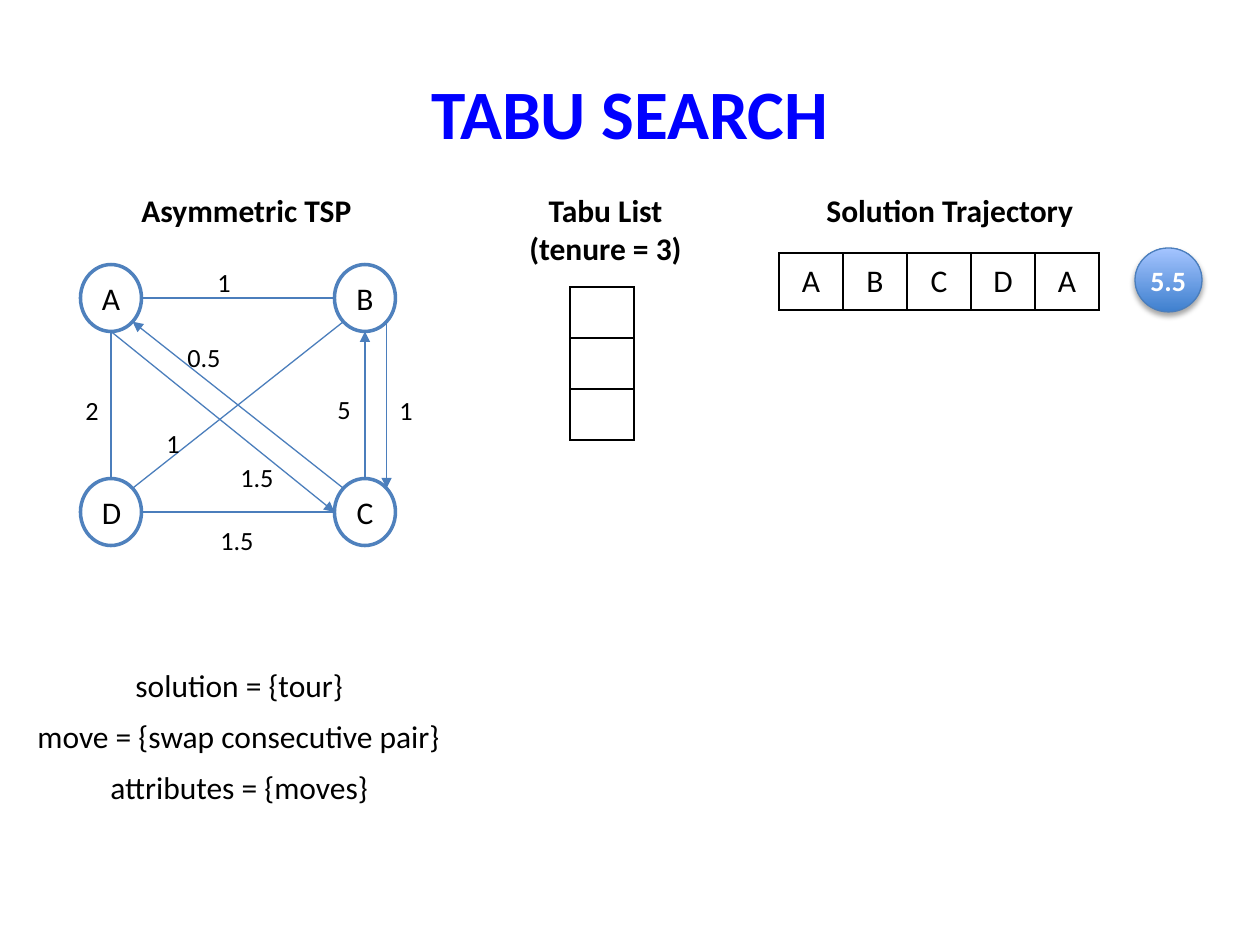
from math import cos, radians, sin
from typing import NamedTuple

from lxml.etree import SubElement
from pptx import Presentation
from pptx.dml.color import RGBColor
from pptx.enum.shapes import MSO_CONNECTOR, MSO_SHAPE
from pptx.enum.text import MSO_ANCHOR, MSO_AUTO_SIZE, PP_ALIGN
from pptx.oxml.ns import qn
from pptx.util import Emu, Pt

EMU_PER_PX = 914400 / 126
COLORS = {
    "title": "0000FF", "text": "000000", "white": "FFFFFF",
    "node": "4F81BD", "edge": "4B7EBC",
    "cost_dark": "3F80CE", "cost_light": "A4C4FF",
}
NODE_W, NODE_H = 61, 67
NODES = {"A": (111, 298), "B": (365, 298), "D": (111, 512), "C": (365, 512)}
# Clockwise angles from the right-hand side of a node
SIDES = {"right": 0, "bottom right": 45, "bottom": 90, "bottom left": 135,
         "left": 180, "top left": 225, "top": 270, "top right": 315}


class Label(NamedTuple):
    text: str
    left: int
    top: int
    width: int
    height: int
    size: float = 18
    bold: bool = False
    wrap: bool = True
    color: str = "text"
    align: PP_ALIGN = PP_ALIGN.LEFT


class Edge(NamedTuple):
    start: str
    start_side: str
    end: str
    end_side: str
    arrow: bool = False


class Grid(NamedTuple):
    rows: list
    left: int
    top: int
    col_width: int
    row_height: int


LABELS = [
    Label("Asymmetric TSP", 129, 185, 254, 50, bold=True),
    Label("Solution Trajectory", 814, 185, 286, 50, bold=True),
    Label("Tabu List\n(tenure = 3)", 514, 185, 183, 89, bold=True,
          align=PP_ALIGN.CENTER),
    Label("solution = {tour}", 123, 660, 236, 50, wrap=False),
    Label("move = {swap consecutive pair}", 25, 711, 432, 50, wrap=False),
    Label("attributes = {moves}", 98, 762, 286, 50, wrap=False),
]
EDGES = [
    Edge("A", "bottom", "C", "left", True),
    Edge("C", "top left", "A", "bottom right", True),
    Edge("A", "bottom", "D", "top"),
    Edge("D", "right", "C", "left"),
    Edge("B", "bottom left", "D", "top right"),
    Edge("A", "right", "B", "left"),
    Edge("B", "bottom right", "C", "top right", True),
    Edge("C", "top", "B", "bottom", True),
]
WEIGHTS = [
    ("1", 205, 260, 37), ("1", 154, 421, 37), ("1", 387, 388, 37),
    ("2", 73, 388, 37), ("1.5", 208, 518, 60), ("5", 325, 387, 37),
    ("0.5", 175, 335, 60), ("1.5", 228, 455, 77),
]
TRAJECTORY = Grid([list("ABCDA")], 779, 253, 64, 57)
TABU_LIST = Grid([[""]] * 3, 570, 287, 64, 51)


def px(n: float) -> Emu:
    return Emu(round(n * EMU_PER_PX))


def rgb(name: str) -> RGBColor:
    return RGBColor.from_string(COLORS[name])


def write(tf, text: str, size: float = 18, bold: bool = False,
          color: str = "text", align: PP_ALIGN = PP_ALIGN.CENTER) -> None:
    tf.text = text
    for p in tf.paragraphs:
        p.alignment = align
        for r in p.runs:
            for name, value in {"name": "Calibri", "size": Pt(size), "bold": bold}.items():
                setattr(r.font, name, value)
            r.font.color.rgb = rgb(color)


def add_label(s, label: Label) -> None:
    box = s.shapes.add_textbox(*map(px, label[1:5]))
    tf = box.text_frame
    tf.word_wrap = label.wrap
    tf.auto_size = MSO_AUTO_SIZE.SHAPE_TO_FIT_TEXT
    write(tf, label.text, label.size, label.bold, label.color, label.align)


def add_grid(s, grid: Grid) -> None:
    n_rows, n_cols = len(grid.rows), len(grid.rows[0])
    table = s.shapes.add_table(
        n_rows, n_cols, px(grid.left), px(grid.top),
        px(n_cols * grid.col_width), px(n_rows * grid.row_height)).table
    table.first_row = table.horz_banding = False
    for col in table.columns:
        col.width = px(grid.col_width)
    for row, texts in zip(table.rows, grid.rows):
        row.height = px(grid.row_height)
        for cell, text in zip(row.cells, texts):
            write(cell.text_frame, text)
            cell.vertical_anchor = MSO_ANCHOR.MIDDLE
            add_borders(cell)
            cell.fill.background()


def add_borders(cell) -> None:
    props = cell._tc.get_or_add_tcPr()
    for side in ("lnL", "lnR", "lnT", "lnB"):
        ln = SubElement(props, qn(f"a:{side}"), w=str(Pt(1)))
        fill = SubElement(ln, qn("a:solidFill"))
        SubElement(fill, qn("a:srgbClr"), val=COLORS["text"])


def add_node(s, name: str) -> None:
    x, y = NODES[name]
    sp = s.shapes.add_shape(MSO_SHAPE.OVAL, px(x - NODE_W / 2), px(y - NODE_H / 2),
                            px(NODE_W), px(NODE_H))
    sp.shadow.inherit = False
    sp.fill.solid()
    sp.fill.fore_color.rgb = rgb("white")
    sp.line.color.rgb = rgb("node")
    sp.line.width = Pt(2)
    sp.text_frame.vertical_anchor = MSO_ANCHOR.MIDDLE
    write(sp.text_frame, name)


def rim_point(node: str, side: str) -> tuple[Emu, Emu]:
    x, y = NODES[node]
    angle = radians(SIDES[side])
    return px(x + NODE_W / 2 * cos(angle)), px(y + NODE_H / 2 * sin(angle))


def add_edge(s, edge: Edge) -> None:
    line = s.shapes.add_connector(
        MSO_CONNECTOR.STRAIGHT, *rim_point(edge.start, edge.start_side),
        *rim_point(edge.end, edge.end_side))
    line.line.color.rgb = rgb("edge")
    line.line.width = Pt(0.75)
    if edge.arrow:
        SubElement(line.line._get_or_add_ln(), qn("a:tailEnd"), type="triangle")
    SubElement(line._element.spPr, qn("a:effectLst"))


def add_cost(s, cost: str) -> None:
    sp = s.shapes.add_shape(MSO_SHAPE.OVAL, px(1135), px(248), px(67), px(64))
    sp.fill.gradient()
    sp.fill.gradient_angle = 90
    for stop, color in zip(sp.fill.gradient_stops, ("cost_dark", "cost_light")):
        stop.color.rgb = rgb(color)
    sp.line.color.rgb = rgb("edge")
    sp.line.width = Pt(0.75)
    sp.shadow.inherit = False
    effects = sp._element.spPr.find(qn("a:effectLst"))
    shadow = SubElement(effects, qn("a:outerShdw"), blurRad=str(Pt(3.1)),
                        dist=str(Pt(1.8)), dir="5400000", rotWithShape="0")
    black = SubElement(shadow, qn("a:srgbClr"), val=COLORS["text"])
    SubElement(black, qn("a:alpha"), val="35000")
    add_label(s, Label(cost, 1138, 257, 62, 47, 16, True, False, "white"))


def main() -> None:
    prs = Presentation()
    prs.slide_width, prs.slide_height = px(1260), px(945)
    s = prs.slides.add_slide(prs.slide_layouts[5])
    title = s.shapes.title
    box = {"left": 63, "top": 63, "width": 1134, "height": 98}
    for name, value in box.items():
        setattr(title, name, px(value))
    title.text_frame.vertical_anchor = MSO_ANCHOR.MIDDLE
    write(title.text_frame, "TABU SEARCH", 39.6, True, "title")

    for label in LABELS:
        add_label(s, label)
    for grid in (TRAJECTORY, TABU_LIST):
        add_grid(s, grid)
    add_cost(s, "5.5")
    for name in NODES:
        add_node(s, name)
    for edge in EDGES:
        add_edge(s, edge)
    for text, left, top, width in WEIGHTS:
        add_label(s, Label(text, left, top, width, 44, 15))
    prs.save("out.pptx")


if __name__ == "__main__":
    main()
